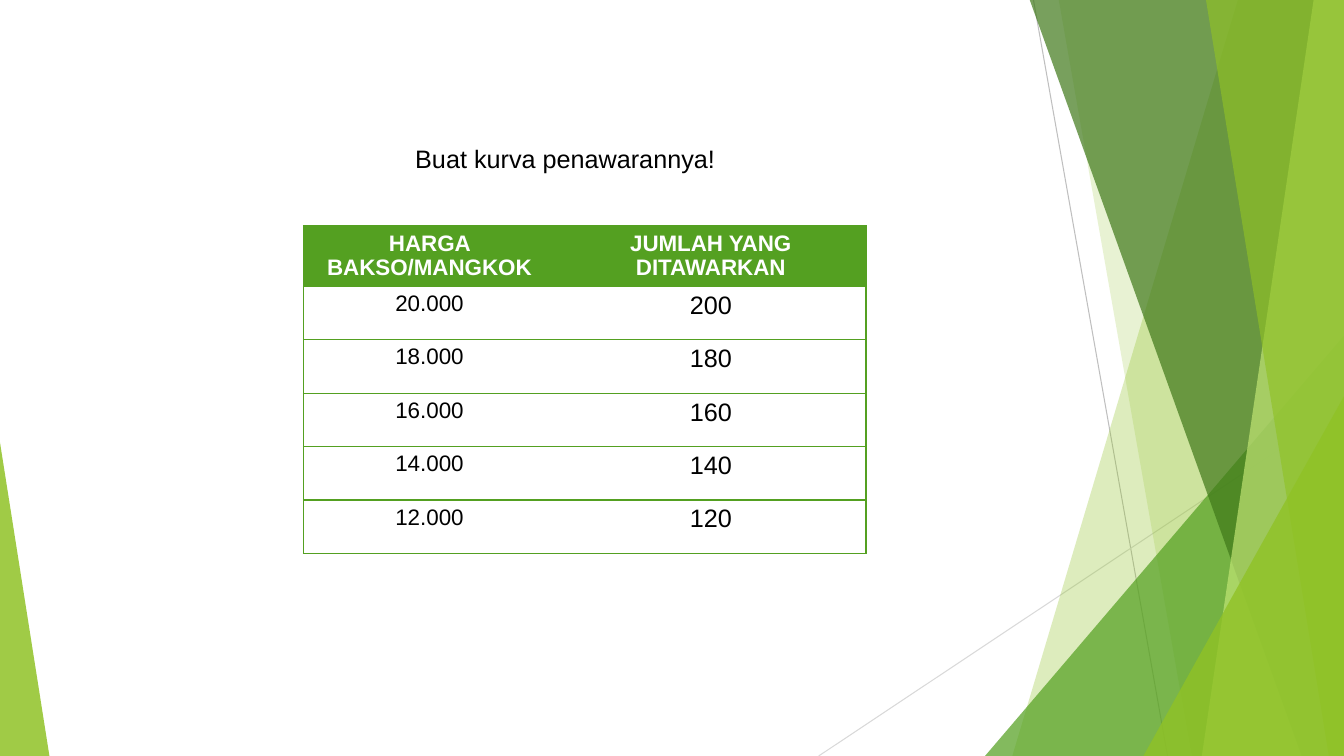
from lxml import etree
from pptx import Presentation
from pptx.dml.color import RGBColor
from pptx.enum.shapes import MSO_CONNECTOR, MSO_SHAPE
from pptx.enum.text import PP_ALIGN
from pptx.oxml.ns import qn
from pptx.util import Inches, Pt

STRAIGHT = MSO_CONNECTOR.STRAIGHT
TRIANGLE = MSO_SHAPE.ISOSCELES_TRIANGLE
CENTER = PP_ALIGN.CENTER

WIDTH, HEIGHT = 13.33, 7.5
TOP = -0.01
GREEN, LIME = "54A021", "90C226"


def rgb(color):
    return RGBColor.from_string(color)


def paint(shape, color, opacity):
    """Fill a shape with a see-through colour, with no line or shadow."""
    shape.fill.solid()
    shape.fill.fore_color.rgb = rgb(color)
    color_node = shape._element.spPr.find(".//" + qn("a:srgbClr"))
    etree.SubElement(color_node, qn("a:alpha"), val=str(opacity * 1000))
    shape.line.fill.background()
    shape.shadow.inherit = False


deck = Presentation()
deck.slide_width, deck.slide_height = Inches(WIDTH), Inches(HEIGHT)
page = deck.slides.add_slide(deck.slide_layouts[6])
shapes = page.shapes

# Thin grey lines
for x1, y1, x2, y2, color in [
    (10.25, 0, 11.58, HEIGHT, "BFBFBF"),
    (WIDTH, 4.03, 8.12, HEIGHT, "D9D9D9"),
]:
    line = shapes.add_connector(STRAIGHT, Inches(x1), Inches(y1), Inches(x2), Inches(y2))
    line.line.color.rgb = rgb(color)
    line.line.width = Pt(0.75)
    etree.SubElement(line._element.spPr, qn("a:effectLst"))

# Green facets from back to front: bands reach the right edge, wedges stand on the bottom edge
for kind, geometry, color, opacity in [
    ("band", (12.28, 10.04), LIME, 30),
    ("band", (10.5, 11.82), LIME, 20),
    ("wedge", (9.77, 3.33, 3.56, 1), GREEN, 72),
    ("band", (10.21, 12.91), "3F7819", 70),
    ("band", (13.03, 11.92), "C0E474", 70),
    ("band", (11.96, 13.18), LIME, 65),
    ("wedge", (11.34, 3.93, 1.99, 1), LIME, 80),
    ("wedge", (0, 4.39, 0.49, 0), LIME, 85),
]:
    if kind == "band":
        top_left, bottom_left = geometry
        outline = shapes.build_freeform(Inches(top_left), Inches(TOP))
        corners = [(WIDTH, TOP), (WIDTH, HEIGHT), (bottom_left, HEIGHT)]
        outline.add_line_segments([(Inches(x), Inches(y)) for x, y in corners], close=True)
        facet = outline.convert_to_shape()
    else:
        left, top, width, apex = geometry
        facet = shapes.add_shape(
            TRIANGLE, Inches(left), Inches(top), Inches(width), Inches(HEIGHT - top))
        facet.adjustments[0] = apex
    paint(facet, color, opacity)

# Supply table
rows = [("HARGA BAKSO/MANGKOK", "JUMLAH YANG DITAWARKAN")]
rows += [(f"{quantity // 10}.000", str(quantity)) for quantity in range(200, 100, -20)]
table = shapes.add_table(
    len(rows), 2, Inches(3.01), Inches(2.24), Inches(5.58), Inches(3.25)).table
table.first_row = table.horz_banding = False
table.columns[0].width, table.columns[1].width = Inches(2.5), Inches(3.08)

for row_index, values in enumerate(rows):
    header = row_index == 0
    table.rows[row_index].height = Inches(0.6 if header else 0.53)
    for column_index, value in enumerate(values):
        cell = table.cell(row_index, column_index)
        outer_side = "a:lnR" if column_index else "a:lnL"
        properties = cell._tc.get_or_add_tcPr()
        for side in ("a:lnL", "a:lnR", "a:lnT", "a:lnB"):
            border = etree.SubElement(properties, qn(side), w=str(Pt(1)))
            if side in (outer_side, "a:lnT", "a:lnB"):
                fill = etree.SubElement(border, qn("a:solidFill"))
                etree.SubElement(fill, qn("a:srgbClr"), val=GREEN)
            else:
                etree.SubElement(border, qn("a:noFill"))
        if header:
            cell.fill.solid()
            cell.fill.fore_color.rgb = rgb(GREEN)
        else:
            cell.fill.background()
        cell.text = value
        para = cell.text_frame.paragraphs[0]
        para.alignment = CENTER
        para.font.name = "Arial"
        para.font.size = Pt(18 if column_index and not header else 16)
        para.font.bold = header
        para.font.color.rgb = rgb("FFFFFF" if header else "000000")

# Instruction above the table
box = shapes.add_textbox(Inches(2.61), Inches(1.37), Inches(5.99), Inches(0.4))
box.text_frame.word_wrap = True
para = box.text_frame.paragraphs[0]
para.text = "Buat kurva penawarannya!"
para.alignment = CENTER
para.font.name = "Arial"
para.font.size = Pt(18)
para.font.color.rgb = rgb("000000")

deck.save("out.pptx")
